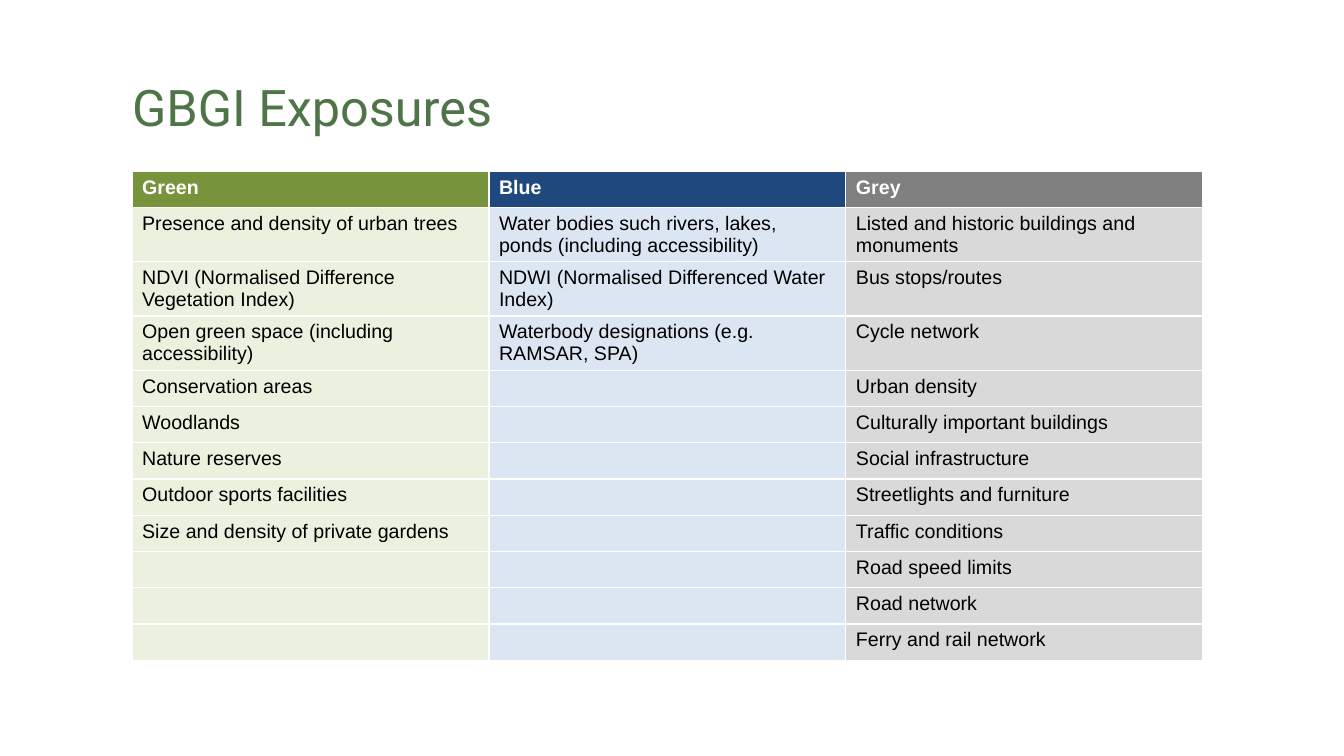
from itertools import zip_longest

from lxml import etree
from pptx import Presentation
from pptx.dml.color import RGBColor
from pptx.enum.text import MSO_ANCHOR, PP_ALIGN
from pptx.oxml.ns import qn
from pptx.util import Inches, Pt

TOP = MSO_ANCHOR.TOP
LEFT = PP_ALIGN.LEFT
TITLE_ONLY = 5

COLORS = {
    "title": "4E7448",
    "header_text": "FFFFFF",
    "body_text": "000000",
    "Green": ("77933C", "EBF1DE"),
    "Blue": ("1F497D", "DCE6F2"),
    "Grey": ("808080", "D9D9D9"),
}
EXPOSURES = {
    "Green": [
        "Presence and density of urban trees",
        "NDVI (Normalised Difference Vegetation Index)",
        "Open green space (including accessibility)",
        "Conservation areas",
        "Woodlands",
        "Nature reserves",
        "Outdoor sports facilities",
        "Size and density of private gardens",
    ],
    "Blue": [
        "Water bodies such rivers, lakes, ponds (including accessibility)",
        "NDWI (Normalised Differenced Water Index)",
        "Waterbody designations (e.g. RAMSAR, SPA)",
    ],
    "Grey": [
        "Listed and historic buildings and monuments",
        "Bus stops/routes",
        "Cycle network",
        "Urban density",
        "Culturally important buildings",
        "Social infrastructure",
        "Streetlights and furniture",
        "Traffic conditions",
        "Road speed limits",
        "Road network",
        "Ferry and rail network",
    ],
}
ROW_HEIGHTS = [0.36] + [0.53] * 3 + [0.36] * 8
COLUMN_WIDTH = 3.54
CELL_SIZE = 14


def style_font(font, name, size, bold, color):
    for attribute, value in {"name": name, "size": Pt(size), "bold": bold}.items():
        setattr(font, attribute, value)
    font.color.rgb = RGBColor.from_string(color)


prs = Presentation()
prs.slide_width, prs.slide_height = Inches(13.33), Inches(7.5)
slide = prs.slides.add_slide(prs.slide_layouts[TITLE_ONLY])

# Title
title = slide.shapes.title
title_box = {"left": 1.31, "top": 0.75, "width": 10.87, "height": 1.11}
for attribute, inches in title_box.items():
    setattr(title, attribute, Inches(inches))
title_format = {"margin_left": 0, "margin_top": 0, "margin_right": 0,
                "margin_bottom": 0, "vertical_anchor": TOP, "word_wrap": True}
for attribute, value in title_format.items():
    setattr(title.text_frame, attribute, value)
heading = title.text_frame.paragraphs[0]
heading.alignment = LEFT
heading_run = heading.add_run()
heading_run.text = "GBGI Exposures"
style_font(heading_run.font, "Roboto", 36, False, COLORS["title"])

# Exposure table: the default table style supplies the white borders
table = slide.shapes.add_table(
    len(ROW_HEIGHTS), len(EXPOSURES), Inches(1.31), Inches(1.7),
    Inches(COLUMN_WIDTH * len(EXPOSURES)), Inches(sum(ROW_HEIGHTS))).table
for column in table.columns:
    column.width = Inches(COLUMN_WIDTH)
for row, height in zip(table.rows, ROW_HEIGHTS):
    row.height = Inches(height)

exposure_rows = [list(EXPOSURES), *zip_longest(*EXPOSURES.values())]
for row_index, exposures in enumerate(exposure_rows):
    is_header = row_index == 0
    text_color = COLORS["header_text" if is_header else "body_text"]
    for column_index, (category, exposure) in enumerate(zip(EXPOSURES, exposures)):
        cell = table.cell(row_index, column_index)
        header_fill, body_fill = COLORS[category]
        cell.fill.solid()
        cell.fill.fore_color.rgb = RGBColor.from_string(
            header_fill if is_header else body_fill)
        paragraph = cell.text_frame.paragraphs[0]
        if exposure:
            run = paragraph.add_run()
            run.text = exposure
            style_font(run.font, "Arial", CELL_SIZE, is_header, text_color)
        else:
            # Keeps empty cells from stretching their row
            etree.SubElement(paragraph._p, qn("a:endParaRPr"), sz=str(CELL_SIZE * 100))

prs.save("out.pptx")
